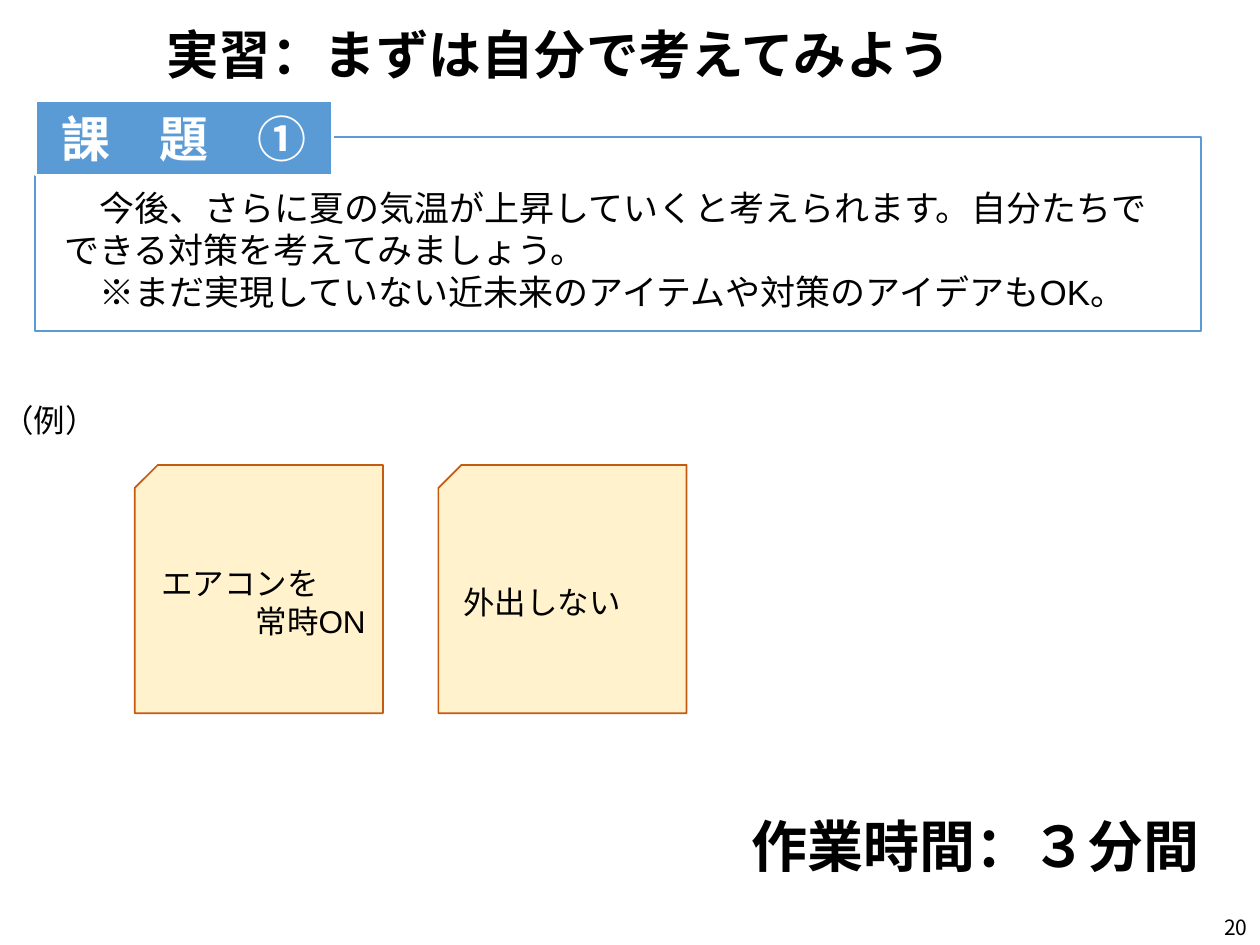
from pptx import Presentation
from pptx.dml.color import RGBColor
from pptx.enum.shapes import MSO_SHAPE
from pptx.enum.text import MSO_ANCHOR, MSO_AUTO_SIZE, PP_ALIGN
from pptx.oxml.ns import qn
from pptx.util import Inches, Pt
from lxml.etree import SubElement

BLACK = RGBColor(0x00, 0x00, 0x00)
WHITE = RGBColor(0xFF, 0xFF, 0xFF)
BLUE = RGBColor(0x5B, 0x9B, 0xD5)
CREAM = RGBColor(0xFF, 0xF2, 0xCC)
BROWN = RGBColor(0xC5, 0x5A, 0x11)
LATIN, JAPANESE = "Arial", "Noto Sans CJK JP"


def write(tf, *lines, size=18, font=LATIN, color=BLACK, bold=False,
          align=PP_ALIGN.LEFT, anchor=MSO_ANCHOR.TOP, spacing=None, indents=()):
    """Fill a text frame, one paragraph a line; indents are first-line, in inches."""
    tf.word_wrap = True
    tf.auto_size = MSO_AUTO_SIZE.NONE
    tf.vertical_anchor = anchor
    for i, line in enumerate(lines):
        p = tf.add_paragraph() if i else tf.paragraphs[0]
        p.alignment = align
        p.line_spacing = spacing
        if i < len(indents):
            p._p.get_or_add_pPr().set("indent", str(Inches(indents[i])))
        r = p.add_run()
        r.text = line
        r.font.size = Pt(size)
        r.font.bold = bold
        r.font.color.rgb = color
        r.font.name = font
        SubElement(r._r.get_or_add_rPr(), qn("a:ea"), typeface=JAPANESE)


class SlideBuilder:
    def __init__(self, prs):
        self.s = prs.slides.add_slide(prs.slide_layouts[5])

    def title(self, text, left, top, width, height):
        sp = self.s.shapes.title
        sp.left, sp.top = Inches(left), Inches(top)
        sp.width, sp.height = Inches(width), Inches(height)
        write(sp.text_frame, text, size=30, font=JAPANESE, bold=True,
              anchor=MSO_ANCHOR.BOTTOM, spacing=0.9)

    def text(self, left, top, width, height, *lines, **style):
        sp = self.s.shapes.add_textbox(Inches(left), Inches(top),
                                       Inches(width), Inches(height))
        write(sp.text_frame, *lines, **style)

    def box(self, left, top, width, height, line, weight=1, fill=None,
            kind=MSO_SHAPE.RECTANGLE):
        sp = self.s.shapes.add_shape(kind, Inches(left), Inches(top),
                                     Inches(width), Inches(height))
        sp.shadow.inherit = False
        if fill is None:
            sp.fill.background()
        else:
            sp.fill.solid()
            sp.fill.fore_color.rgb = fill
        sp.line.color.rgb = line
        sp.line.width = Pt(weight)
        return sp

    def sticky_note(self, left, top, size=1.97):
        sp = self.box(left, top, size, size, BROWN, fill=CREAM,
                      kind=MSO_SHAPE.SNIP_1_RECTANGLE)
        sp.adjustments[0] = 0.093
        sp._element.spPr.xfrm.set("flipH", "1")


def main():
    prs = Presentation()
    prs.slide_width, prs.slide_height = Inches(10), Inches(7.5)
    b = SlideBuilder(prs)

    b.title("実習：まずは自分で考えてみよう", 1.22, -0.03, 8.78, 0.76)

    b.box(0.28, 1.09, 9.25, 1.54, BLUE)
    label = b.box(0.28, 0.8, 2.36, 0.59, WHITE, weight=1.5, fill=BLUE)
    write(label.text_frame, "課　題　①", size=28, color=WHITE, bold=True,
          align=PP_ALIGN.CENTER, anchor=MSO_ANCHOR.MIDDLE)
    b.text(0.41, 1.43, 8.92, 1.11,
           "　今後、さらに夏の気温が上昇していくと考えられます。自分たちでできる対策を考えてみましょう。",
           "　※まだ実現していない近未来のアイテムや対策のアイデアもOK。", size=20)

    b.text(-0.08, 3.13, 1, 0.4, "（例）")
    for left in (1.07, 3.48):
        b.sticky_note(left, 3.69)
    b.text(1.18, 4.43, 1.86, 0.71, "エアコンを", "常時ON", indents=(0, 0.75))
    b.text(3.58, 4.58, 1.86, 0.4, "外出しない")

    b.text(5.79, 6.39, 3.91, 0.64, "作業時間：３分間", size=32, bold=True,
           align=PP_ALIGN.CENTER)
    b.text(9.1, 7.23, 0.9, 0.27, "20", size=12, font=JAPANESE,
           align=PP_ALIGN.RIGHT, spacing=Pt(13))

    prs.save("out.pptx")


if __name__ == "__main__":
    main()
